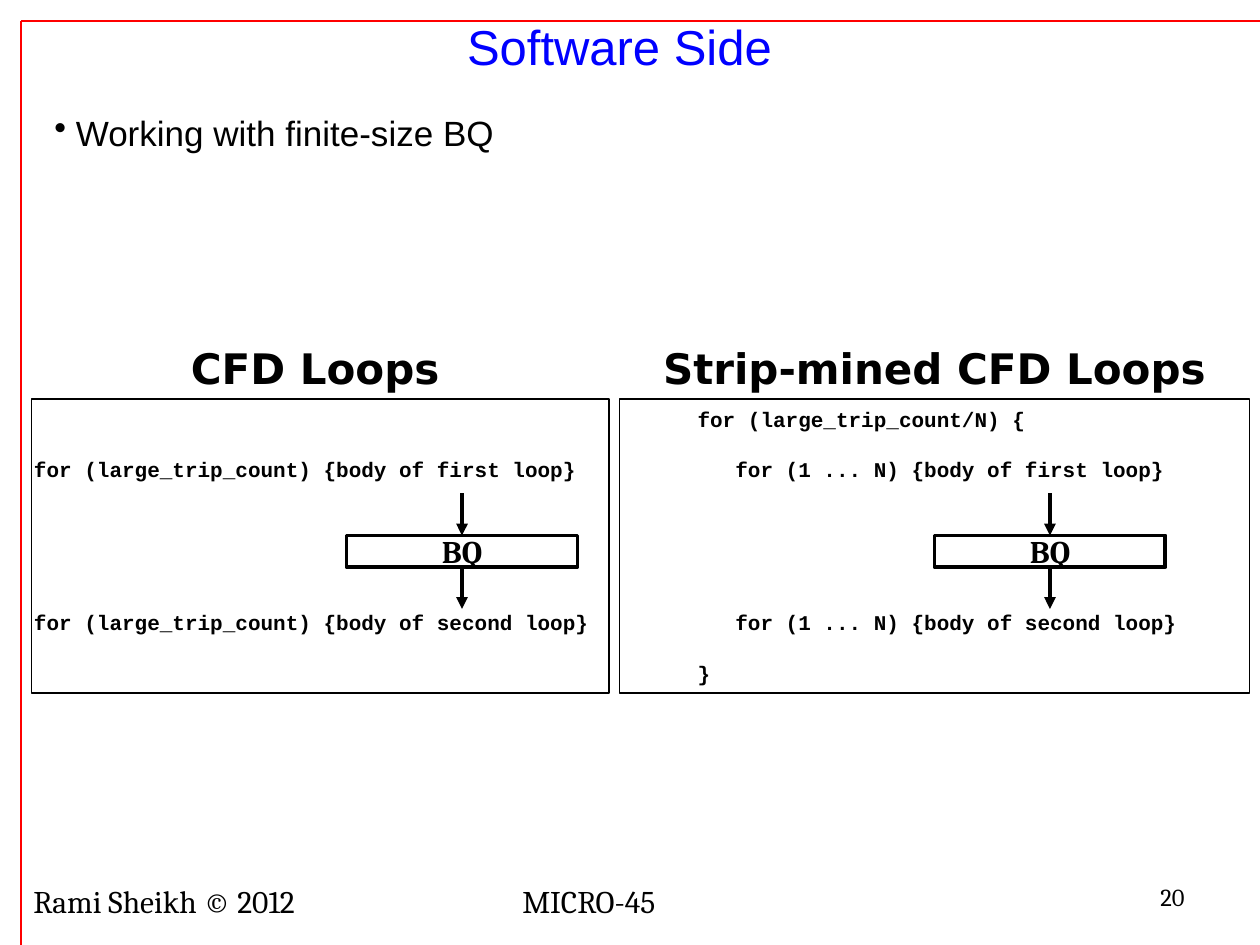
import pptx
import pptx.util
import pptx.dml.color
import pptx.enum.shapes
import pptx.enum.text
import pptx.oxml
import pptx.oxml.ns

Pt = pptx.util.Pt
Inches = pptx.util.Inches
ALIGN = pptx.enum.text.PP_ALIGN
MIDDLE = pptx.enum.text.MSO_ANCHOR.MIDDLE

COLORS = {"black": "000000", "white": "FFFFFF", "red": "FF0000", "blue": "0000FF"}
COLS, ROWS = 120, 90
CELL = Inches(10) / COLS
LINE_GAP = 14.6
CHAR = 0.1


def grid(n):
    return pptx.util.Emu(round(n * CELL))


def rgb(name):
    return pptx.dml.color.RGBColor.from_string(COLORS[name])


def child(parent, tag, **attrs):
    el = pptx.oxml.ns.qn(tag)
    el = parent.makeelement(el, attrs)
    parent.append(el)
    return el


def add_run(p, text, size, face, color="black", bold=False):
    r = p.add_run()
    r.text = text
    f = r.font
    f.size, f.name, f.bold = Pt(size), face, bold
    f.color.rgb = rgb(color)


def add_text(s, box, text, size, face, color="black", bold=False, align=ALIGN.LEFT):
    tf = s.shapes.add_textbox(*map(grid, box)).text_frame
    tf.word_wrap = True
    p = tf.paragraphs[0]
    p.alignment = align
    add_run(p, text, size, face, color, bold)
    return p


def add_box(s, box, width, fill=None):
    sp = s.shapes.add_shape(pptx.enum.shapes.MSO_SHAPE.RECTANGLE, *map(grid, box))
    sp.shadow.inherit = False
    if fill:
        sp.fill.solid()
        sp.fill.fore_color.rgb = rgb(fill)
    else:
        sp.fill.background()
    sp.line.color.rgb = rgb("black")
    sp.line.width = Pt(width)
    sp.text_frame.vertical_anchor = MIDDLE
    return sp


def add_line(s, ends, color, width, arrow=False):
    cx = s.shapes.add_connector(
        pptx.enum.shapes.MSO_CONNECTOR.STRAIGHT, *map(grid, ends))
    cx.line.color.rgb = rgb(color)
    cx.line.width = Pt(width)
    if arrow:
        child(cx.line._get_or_add_ln(), "a:tailEnd", type="triangle")
    child(cx._element.spPr, "a:effectLst")


def frame(s, x, y):
    add_line(s, (x, y, COLS, y), "red", 1)
    add_line(s, (x, y, x, ROWS), "red", 0.75)


def bullet(s, box, text):
    p = add_text(s, box, text, 20, "Arial")
    pPr = p._p.get_or_add_pPr()
    indent = Inches(0.17)
    pPr.set("marL", str(indent))
    pPr.set("indent", str(-indent))
    child(pPr, "a:buChar", char="•")


def queue(s, x, y):
    w, h, arrow = 22, 3, 4
    sp = add_box(s, (x, y, w, h), 2.25)
    tf = sp.text_frame
    tf.word_wrap = False
    p = tf.paragraphs[0]
    p.alignment = ALIGN.CENTER
    add_run(p, "BQ", 18, "Cambria", bold=True)
    mid = x + w / 2
    for top in (y - arrow, y + h):
        add_line(s, (mid, top, mid, top + arrow), "black", 2.25, arrow=True)


def loop_panel(s, box, title, title_box, lines):
    x, y, w, h = box
    add_text(s, title_box, title, 24, "DejaVu Sans", bold=True, align=ALIGN.CENTER)
    tf = add_box(s, box, 0.75, "white").text_frame
    tf.word_wrap = True
    tf.margin_left = tf.margin_right = Inches(0.02)
    for i, (text, indent, gap) in enumerate(lines):
        p = tf.add_paragraph() if i else tf.paragraphs[0]
        p.alignment = ALIGN.LEFT
        p._p.get_or_add_pPr().set("marL", str(Inches(indent * CHAR)))
        if gap:
            p.space_before = Pt(gap * LINE_GAP)
        add_run(p, text, 12, "Courier New", bold=True)
    queue(s, x + 30, y + 13)


def footer(s, y, h):
    p = add_text(s, (2, y, 104, h), "Rami Sheikh © 2012\tMICRO-45", 18, "Cambria")
    tabs = child(p._p.get_or_add_pPr(), "a:tabLst")
    child(tabs, "a:tab", pos=str(Inches(3.88)), algn="l")
    add_text(s, (107, y, 7, h), "20", 14, "Cambria", align=ALIGN.RIGHT)


def main():
    prs = pptx.Presentation()
    prs.slide_width, prs.slide_height = grid(COLS), grid(ROWS)
    s = prs.slides.add_slide(prs.slide_layouts[6])
    frame(s, 2, 2)
    add_text(s, (14, 1, 90, 7), "Software Side", 28, "Arial", "blue", align=ALIGN.CENTER)
    bullet(s, (4, 10, 96, 5), "Working with finite-size BQ")
    loop_panel(s, (3, 38, 55, 28), "CFD Loops", (16, 32, 28, 6), [
        ("for (large_trip_count) {body of first loop}", 0, 0),
        ("for (large_trip_count) {body of second loop}", 0, 5),
    ])
    loop_panel(s, (59, 38, 60, 28), "Strip-mined CFD Loops", (59, 32, 60, 6), [
        ("for (large_trip_count/N) {", 6, 0),
        ("for (1 ... N) {body of first loop}", 9, 1),
        ("for (1 ... N) {body of second loop}", 9, 5),
        ("}", 6, 1),
    ])
    footer(s, 83.4, 5)
    prs.save("out.pptx")


if __name__ == "__main__":
    main()
